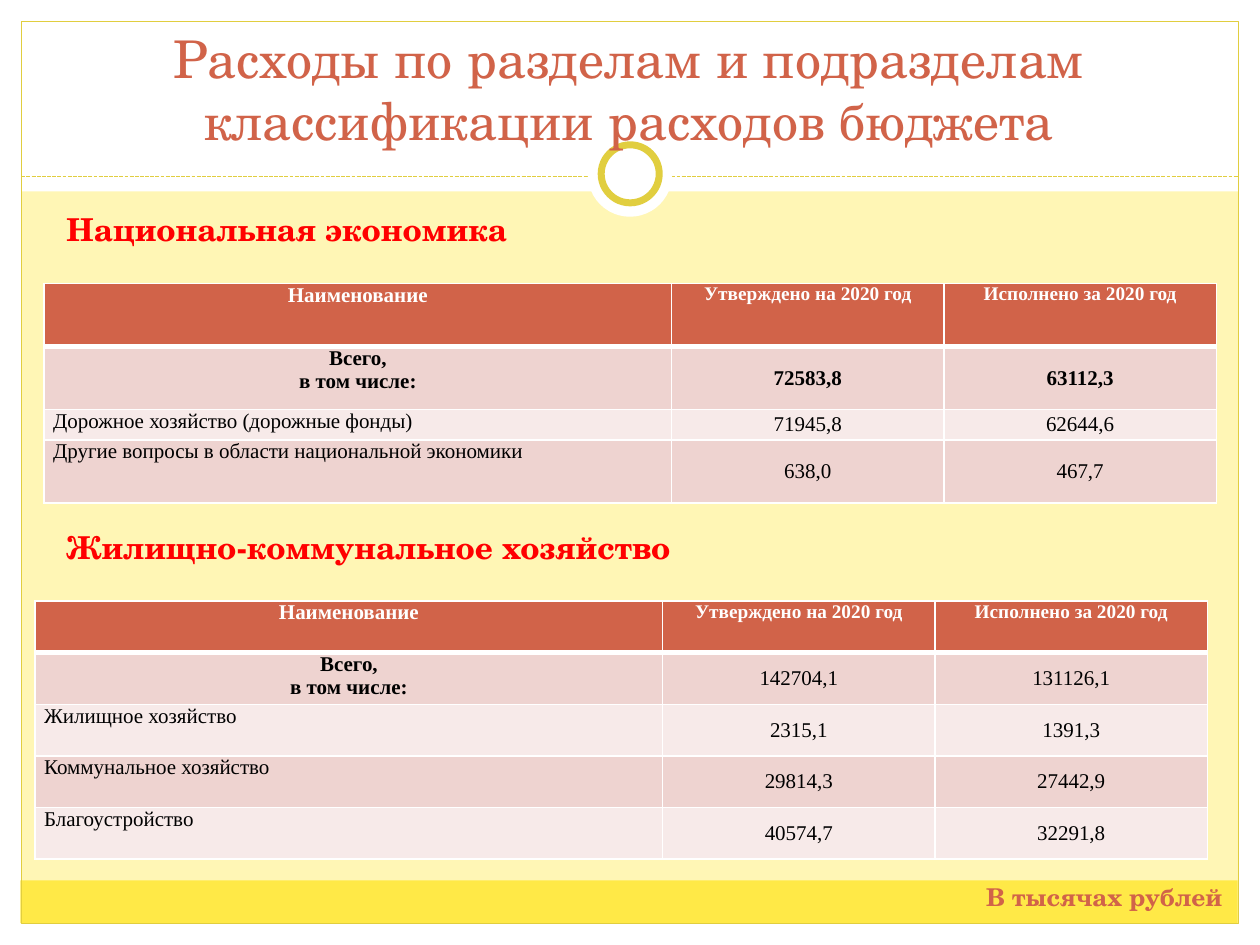
"""Build the slide on budget spending by section and subsection."""
from lxml import etree
from pptx import Presentation
from pptx.dml.color import RGBColor
from pptx.enum import dml, shapes, text
from pptx.oxml import ns
from pptx.util import Cm, Pt

COLOURS = {
    "page": "FFF6B5", "white": "FFFFFF", "footer": "FFE947", "gold": "E1CE3F",
    "accent": "D16349", "heading": "FF0000", "ink": "000000",
    "odd_row": "EED3D0", "even_row": "F7EAE9",
}
DISPLAY, BODY = "TeX Gyre Schola", "Times New Roman"
LEFT, CENTRE, JUSTIFY = text.PP_ALIGN.LEFT, text.PP_ALIGN.CENTER, text.PP_ALIGN.JUSTIFY
TOP, MIDDLE, BOTTOM = text.MSO_ANCHOR.TOP, text.MSO_ANCHOR.MIDDLE, text.MSO_ANCHOR.BOTTOM
RECT, OVAL = shapes.MSO_SHAPE.RECTANGLE, shapes.MSO_SHAPE.OVAL
COLUMNS = (12.65, 5.49, 5.49)
HEADER = ("Наименование", "Утверждено на 2020 год", "Исполнено за 2020 год")
TOTAL = "Всего,\nв том числе:"
ECONOMY = [
    (TOTAL, "72583,8", "63112,3"),
    ("Дорожное хозяйство (дорожные фонды)", "71945,8", "62644,6"),
    ("Другие вопросы в области национальной экономики", "638,0", "467,7"),
]
HOUSING = [
    (TOTAL, "142704,1", "131126,1"),
    ("Жилищное хозяйство", "2315,1", "1391,3"),
    ("Коммунальное хозяйство", "29814,3", "27442,9"),
    ("Благоустройство", "40574,7", "32291,8"),
]


def rgb(name):
    return RGBColor.from_string(COLOURS[name])


def write(frame, wording, size=12, font=BODY, colour="ink", bold=False, align=LEFT):
    for index, line in enumerate(wording.split("\n")):
        paragraph = frame.add_paragraph() if index else frame.paragraphs[0]
        paragraph.alignment = align
        run = paragraph.add_run()
        run.text = line
        run.font.size, run.font.name, run.font.bold = Pt(size), font, bold
        run.font.color.rgb = rgb(colour)


def add_panel(slide, box, kind=RECT, fill=None, line=None, width=0.75):
    panel = slide.shapes.add_shape(kind, *map(Cm, box))
    panel.shadow.inherit = False
    if fill:
        panel.fill.solid()
        panel.fill.fore_color.rgb = rgb(fill)
    else:
        panel.fill.background()
    if line:
        panel.line.color.rgb = rgb(line)
        panel.line.width = Pt(width)
    else:
        panel.line.fill.background()


def add_divider(slide, left, right, y):
    divider = slide.shapes.add_connector(
        shapes.MSO_CONNECTOR.STRAIGHT, Cm(left), Cm(y), Cm(right), Cm(y))
    divider.line.color.rgb = rgb("gold")
    divider.line.width = Pt(0.75)
    divider.line.dash_style = dml.MSO_LINE.SQUARE_DOT
    etree.SubElement(divider._element.spPr, ns.qn("a:effectLst"))


def add_frame(slide):
    for box in ((0, 18.62, 25.4, 0.43), (0, 0, 25.4, 3.86),
                (0, 0, 0.43, 19.05), (24.97, 0, 0.43, 19.05)):
        add_panel(slide, box, fill="white")
    add_panel(slide, (0.41, 17.75, 24.54, 0.86), fill="footer")
    add_panel(slide, (0.43, 0.43, 24.54, 18.19), line="gold")
    add_divider(slide, 0.43, 24.97, 3.56)
    add_panel(slide, (11.85, 2.67, 1.7, 1.7), OVAL, fill="white")
    add_panel(slide, (12.12, 2.92, 1.17, 1.17), OVAL, fill="white", line="gold", width=4)


def set_title(slide, wording):
    title = slide.shapes.title
    title.left, title.top, title.width, title.height = map(Cm, (0.84, 1.07, 23.7, 2.11))
    frame = title.text_frame
    frame.auto_size = text.MSO_AUTO_SIZE.NONE
    frame.vertical_anchor = BOTTOM
    write(frame, wording, size=29.7, font=DISPLAY, colour="accent", align=CENTRE)
    slide.shapes._spTree.append(title._element)


def add_label(slide, box, wording, wrap=False, **style):
    frame = slide.shapes.add_textbox(*map(Cm, box)).text_frame
    frame.word_wrap = wrap
    write(frame, wording, font=DISPLAY, bold=True, **style)


def add_border(cell, side, width):
    border = etree.SubElement(cell._tc.get_or_add_tcPr(), ns.qn(f"a:ln{side}"), w=str(Pt(width)))
    fill = etree.SubElement(border, ns.qn("a:solidFill"))
    etree.SubElement(fill, ns.qn("a:srgbClr"), val=COLOURS["white"])


def fill_cell(cell, wording, fill, anchor, top_width, bottom_width, **style):
    cell.margin_left = cell.margin_right = Cm(0.18)
    cell.margin_top = cell.margin_bottom = 0
    cell.vertical_anchor = anchor
    for side, width in (("L", 1), ("R", 1), ("T", top_width), ("B", bottom_width)):
        add_border(cell, side, width)
    cell.fill.solid()
    cell.fill.fore_color.rgb = rgb(fill)
    write(cell.text_frame, wording, **style)


def add_budget_table(slide, left, top, heights, records, bold_totals, name_align):
    table = slide.shapes.add_table(
        len(heights), len(COLUMNS), Cm(left), Cm(top),
        Cm(sum(COLUMNS)), Cm(sum(heights))).table
    for column, width in zip(table.columns, COLUMNS):
        column.width = Cm(width)
    for row, height in zip(table.rows, heights):
        row.height = Cm(height)
    for c, wording in enumerate(HEADER):
        fill_cell(table.cell(0, c), wording, "accent", TOP, 1, 3,
                  size=11 if c else 12, colour="white", bold=True, align=CENTRE)
    for r, record in enumerate(records, 1):
        is_total = r == 1
        for c, wording in enumerate(record):
            fill_cell(table.cell(r, c), wording, "odd_row" if r % 2 else "even_row",
                      MIDDLE if c else TOP, 3 if is_total else 1, 1,
                      bold=is_total and (c == 0 or bold_totals),
                      align=CENTRE if c or is_total else name_align)


def main():
    deck = Presentation()
    deck.slide_width, deck.slide_height = Cm(25.4), Cm(19.05)
    slide = deck.slides.add_slide(deck.slide_layouts[5])
    slide.background.fill.solid()
    slide.background.fill.fore_color.rgb = rgb("page")
    add_frame(slide)
    set_title(slide, "Расходы по разделам и подразделам классификации расходов бюджета")
    add_label(slide, (1.09, 4.11, 9.65, 1.02), "Национальная экономика",
              size=18, colour="heading")
    add_budget_table(slide, 0.89, 5.72, (1.27, 1.27, 0.61, 1.27), ECONOMY, True, LEFT)
    add_label(slide, (1.09, 10.52, 13.08, 1.02), "Жилищно-коммунальное хозяйство",
              size=18, colour="heading")
    add_budget_table(slide, 0.71, 12.12, [1.04] * 5, HOUSING, False, JUSTIFY)
    add_label(slide, (19.63, 17.65, 5.77, 1.19), "В тысячах рублей", wrap=True,
              size=14, colour="accent")
    deck.save("out.pptx")


if __name__ == "__main__":
    main()
